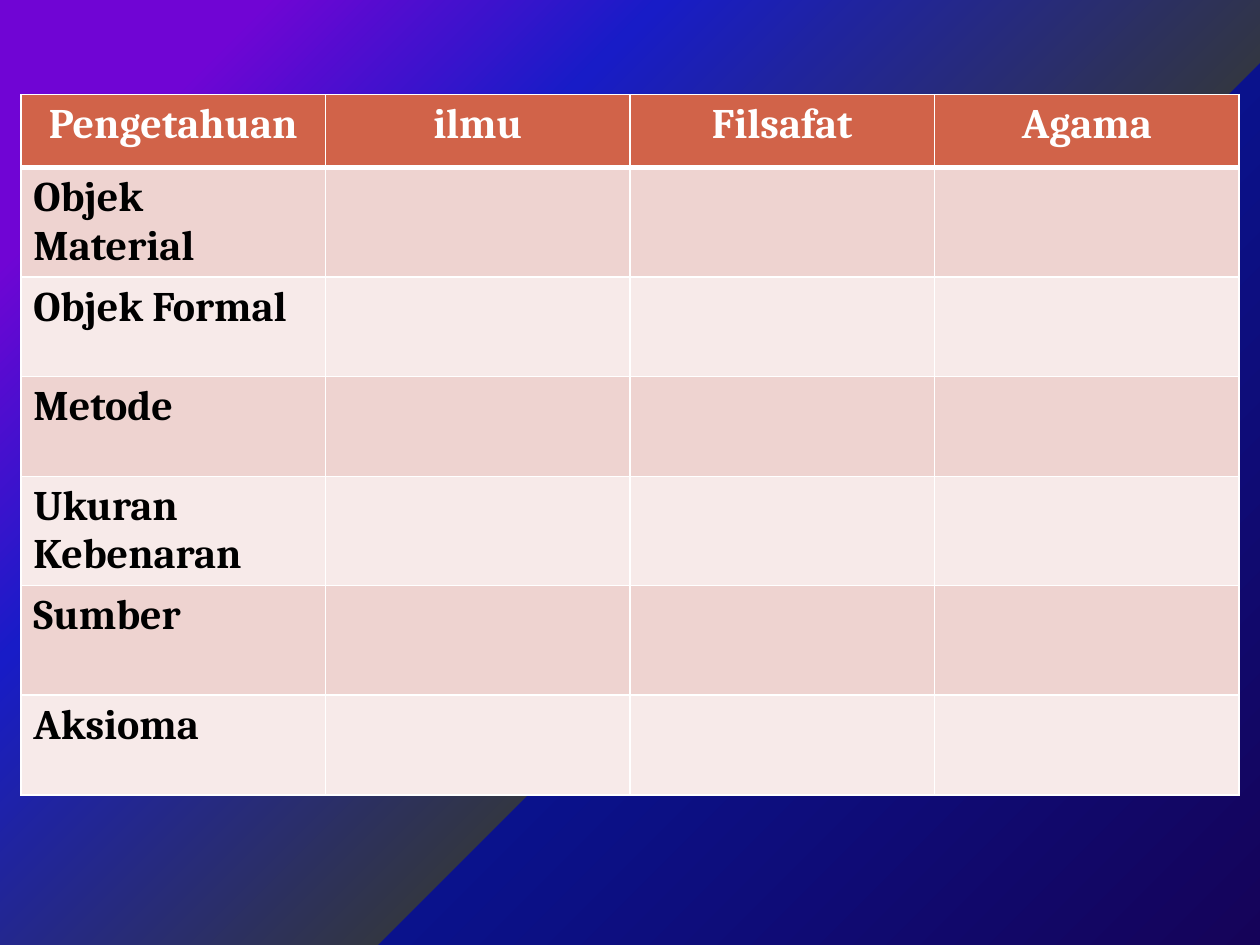
from dataclasses import dataclass

from lxml.etree import SubElement
from pptx import Presentation
from pptx.dml.color import RGBColor
from pptx.enum.text import PP_ALIGN
from pptx.oxml import parse_xml
from pptx.oxml.ns import nsdecls, qn
from pptx.util import Cm, Pt

COLORS = {
    "header": "D16349",
    "odd": "EED3D0",
    "even": "F7EAE9",
    "border": "FFFFFF",
    "header_text": "FFFFFF",
    "label_text": "000000",
}
BACKGROUND_STOPS = [
    (0, "150359"), (40, "0A128C"), (40, "323643"), (70, "181CC7"), (88, "7005D4"),
]
TEXT_FORMAT = {"name": "Cambria", "size": Pt(24), "bold": True}
HEADINGS = ["Pengetahuan", "ilmu", "Filsafat", "Agama"]
COLUMN_WIDTH = 6.14
THIN, THICK = 1, 3


@dataclass
class Row:
    texts: list[str]
    fill: str
    height: float = 2.01
    color: str = "label_text"
    align: PP_ALIGN = PP_ALIGN.LEFT
    top: int = THIN
    bottom: int = THIN


ROWS = [
    Row(HEADINGS, "header", 1.47, "header_text", PP_ALIGN.CENTER, bottom=THICK),
    Row(["Objek Material"], "odd", top=THICK),
    Row(["Objek Formal"], "even"),
    Row(["Metode"], "odd"),
    Row(["Ukuran Kebenaran"], "even"),
    Row(["Sumber"], "odd", 2.21),
    Row(["Aksioma"], "even"),
]


def set_background(s) -> None:
    """Fill the slide with a gradient that spreads from the lower right corner."""
    stops = "".join(
        f'<a:gs pos="{pos * 1000}"><a:srgbClr val="{color}"/></a:gs>'
        for pos, color in BACKGROUND_STOPS
    )
    bg = parse_xml(
        f'<p:bg {nsdecls("p", "a")}><p:bgPr><a:gradFill rotWithShape="1">'
        f'<a:gsLst>{stops}</a:gsLst><a:path path="circle">'
        '<a:fillToRect l="100000" t="100000"/></a:path></a:gradFill>'
        "<a:effectLst/></p:bgPr></p:bg>"
    )
    s.element.cSld.insert(0, bg)


def set_borders(cell, row: Row) -> None:
    tcPr = cell._tc.get_or_add_tcPr()
    widths = {"lnL": THIN, "lnR": THIN, "lnT": row.top, "lnB": row.bottom}
    for side, width in widths.items():
        ln = SubElement(tcPr, qn(f"a:{side}"), w=str(Pt(width)))
        fill = SubElement(ln, qn("a:solidFill"))
        SubElement(fill, qn("a:srgbClr"), val=COLORS["border"])


def write_text(cell, text: str, row: Row) -> None:
    p = cell.text_frame.paragraphs[0]
    p.alignment = row.align
    r = p.add_run()
    r.text = text
    for name, value in TEXT_FORMAT.items():
        setattr(r.font, name, value)
    r.font.color.rgb = RGBColor.from_string(COLORS[row.color])


def draw_table(s, rows: list[Row]) -> None:
    n = len(HEADINGS)
    height = sum(row.height for row in rows)
    table = s.shapes.add_table(
        len(rows), n, Cm(0.42), Cm(1.91), Cm(n * COLUMN_WIDTH), Cm(height)
    ).table
    for column in table.columns:
        column.width = Cm(COLUMN_WIDTH)
    for row, table_row in zip(rows, table.rows):
        table_row.height = Cm(row.height)
        for cell in table_row.cells:
            set_borders(cell, row)
            cell.fill.solid()
            cell.fill.fore_color.rgb = RGBColor.from_string(COLORS[row.fill])
        for cell, text in zip(table_row.cells, row.texts):
            write_text(cell, text, row)


def main() -> None:
    prs = Presentation()
    prs.slide_width, prs.slide_height = Cm(25.4), Cm(19.05)
    s = prs.slides.add_slide(prs.slide_layouts[6])
    set_background(s)
    draw_table(s, ROWS)
    prs.save("out.pptx")


if __name__ == "__main__":
    main()
